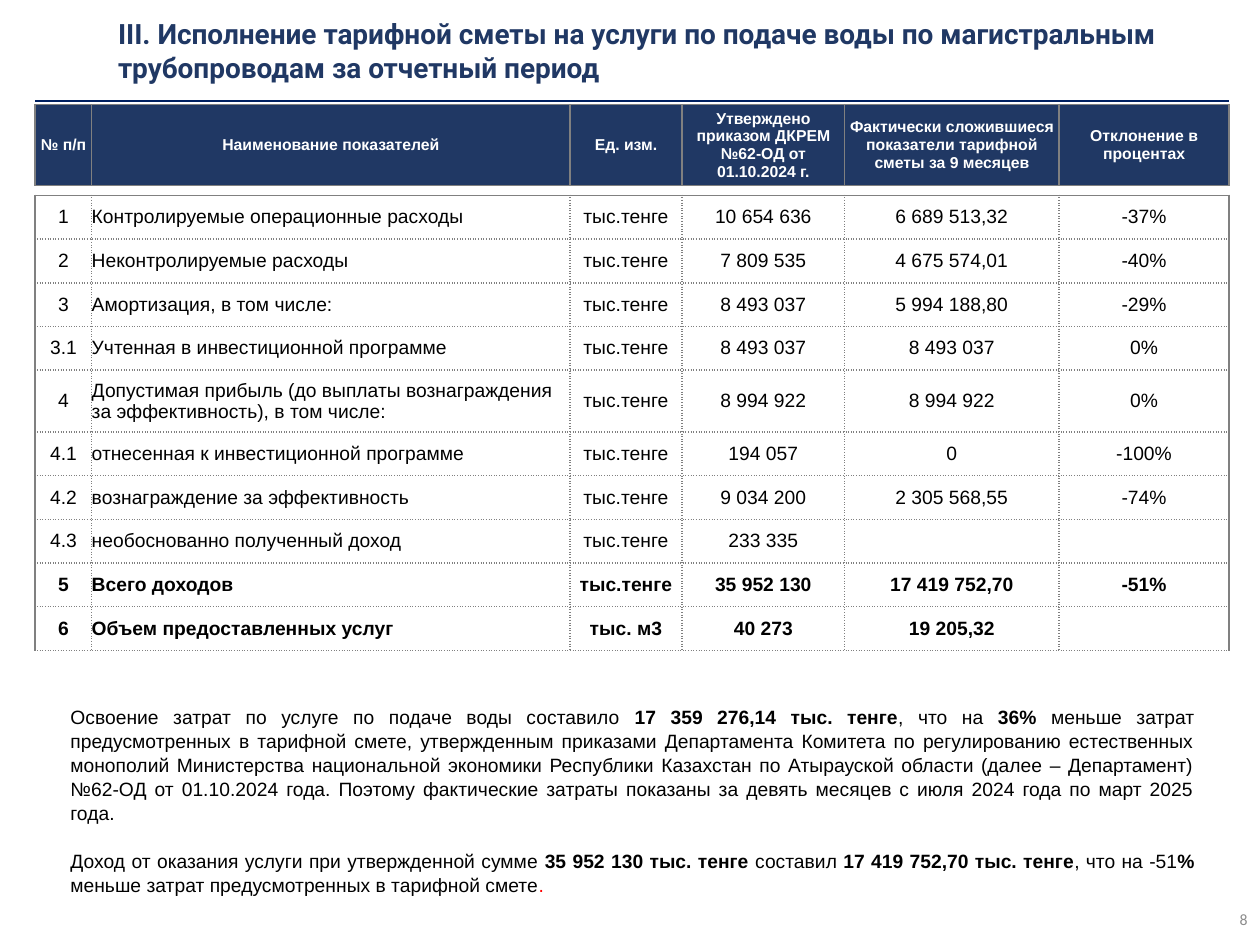
"""Build the slide on execution of the water supply tariff estimate."""
from lxml.etree import SubElement
from pptx import Presentation
from pptx.dml.color import RGBColor
from pptx.enum.shapes import MSO_CONNECTOR
from pptx.enum.text import MSO_ANCHOR, PP_ALIGN
from pptx.oxml.ns import qn
from pptx.util import Cm, Pt

COLORS = {"navy": "203864", "rule": "002060", "grid": "808080", "white": "FFFFFF",
          "text": "000000", "red": "FF0000", "number": "8C8C8C"}
TITLE = ("III. Исполнение тарифной сметы на услуги по подаче воды по магистральным "
         "трубопроводам за отчетный период")
HEADER = ["№ п/п", "Наименование показателей", "Ед. изм.",
          "Утверждено приказом ДКРЕМ №62-ОД от 01.10.2024 г.",
          "Фактически сложившиеся показатели тарифной сметы за 9 месяцев",
          "Отклонение в процентах"]
ROWS = [
    ("1", "Контролируемые операционные расходы", "тыс.тенге", "10 654 636", "6 689 513,32", "-37%"),
    ("2", "Неконтролируемые расходы", "тыс.тенге", "7 809 535", "4 675 574,01", "-40%"),
    ("3", "Амортизация, в том числе:", "тыс.тенге", "8 493 037", "5 994 188,80", "-29%"),
    ("3.1", "Учтенная в инвестиционной программе", "тыс.тенге", "8 493 037", "8 493 037", "0%"),
    ("4", "Допустимая прибыль (до выплаты вознаграждения за эффективность), в том числе:",
     "тыс.тенге", "8 994 922", "8 994 922", "0%"),
    ("4.1", "отнесенная к инвестиционной программе", "тыс.тенге", "194 057", "0", "-100%"),
    ("4.2", "вознаграждение за эффективность", "тыс.тенге", "9 034 200", "2 305 568,55", "-74%"),
    ("4.3", "необоснованно полученный доход", "тыс.тенге", "233 335", "", ""),
    ("5", "Всего доходов", "тыс.тенге", "35 952 130", "17 419 752,70", "-51%"),
    ("6", "Объем предоставленных услуг", "тыс. м3", "40 273", "19 205,32", ""),
]
TOTALS = ("5", "6")
COL_WIDTHS = [1.14, 9.64, 2.26, 3.28, 4.32, 3.43]
ROW_HEIGHTS = [1.25 if row[0] == "4" else 0.88 for row in ROWS]

BODY = {"name": "Arial", "size": Pt(11), "bold": False, "color": "text"}
BOLD = {**BODY, "bold": True}
RED = {**BODY, "color": "red"}
HEAD = {**BOLD, "size": Pt(9), "color": "white"}
HEADING = {"name": "Roboto", "size": Pt(16), "bold": True, "color": "navy"}
NUMBER = {"name": "Calibri", "size": Pt(9), "bold": False, "color": "number"}

NOTES = [
    [("Освоение затрат по услуге по подаче воды составило ", BODY),
     ("17 359 276,14 тыс. тенге", BOLD), (", что на ", BODY), ("36% ", BOLD),
     ("меньше затрат предусмотренных в тарифной смете, утвержденным приказами Департамента "
      "Комитета по регулированию естественных монополий Министерства национальной экономики "
      "Республики Казахстан по Атырауской области (далее – Департамент) №62-ОД от 01.10.2024 "
      "года. Поэтому фактические затраты показаны за девять месяцев с июля 2024 года по март "
      "2025 года.", BODY)],
    [("Доход от оказания услуги при утвержденной сумме ", BODY),
     ("35 952 130 тыс. тенге ", BOLD), ("составил ", BODY),
     ("17 419 752,70 тыс. тенге", BOLD), (", что на -51", BODY), ("% ", BOLD),
     ("меньше затрат предусмотренных в тарифной смете", BODY), (".", RED)],
]


def rgb(name):
    return RGBColor.from_string(COLORS[name])


def set_font(font, style):
    for key, value in style.items():
        if key == "color":
            font.color.rgb = rgb(value)
        else:
            setattr(font, key, value)


def add_runs(p, runs, align):
    p.alignment = align
    for text, style in runs:
        r = p.add_run()
        r.text = text
        set_font(r.font, style)


def add_text(s, box, paragraphs, align, anchor=MSO_ANCHOR.MIDDLE, **spacing):
    tf = s.shapes.add_textbox(*map(Cm, box)).text_frame
    tf.word_wrap = True
    tf.vertical_anchor = anchor
    for i, runs in enumerate(paragraphs):
        p = tf.paragraphs[0] if i == 0 else tf.add_paragraph()
        add_runs(p, runs, align)
        for key, value in spacing.items():
            if i or key != "space_before":
                setattr(p, key, value)


def set_border(cell, side, dash):
    ln = SubElement(cell._tc.get_or_add_tcPr(), qn(f"a:ln{side}"), w=str(Pt(1)))
    SubElement(SubElement(ln, qn("a:solidFill")), qn("a:srgbClr"), val=COLORS["grid"])
    SubElement(ln, qn("a:prstDash"), val=dash)


def add_grid(s, top, rows, heights, header=False):
    table = s.shapes.add_table(len(rows), len(COL_WIDTHS), Cm(0.71), Cm(top),
                               Cm(sum(COL_WIDTHS)), Cm(sum(heights))).table
    table.first_row = table.horz_banding = False
    for col, width in zip(table.columns, COL_WIDTHS):
        col.width = Cm(width)
    for i, (row, height) in enumerate(zip(rows, heights)):
        table.rows[i].height = Cm(height)
        style = HEAD if header else BOLD if row[0] in TOTALS else BODY
        for j, text in enumerate(row):
            cell = table.cell(i, j)
            solid = {"L": j == 0, "R": j == len(row) - 1, "T": i == 0, "B": False}
            for side, outer in solid.items():
                set_border(cell, side, "solid" if header or outer else "sysDot")
            cell.fill.solid()
            cell.fill.fore_color.rgb = rgb("navy" if header else "white")
            cell.vertical_anchor = MSO_ANCHOR.MIDDLE
            for side in ("left", "right", "top", "bottom"):
                setattr(cell, f"margin_{side}", 0)
            p = cell.text_frame.paragraphs[0]
            left = j == 1 and not header
            if text:
                add_runs(p, [(text, style)], PP_ALIGN.LEFT if left else PP_ALIGN.CENTER)
            else:
                set_font(p.font, style)


def main():
    prs = Presentation()
    prs.slide_width, prs.slide_height = Cm(25.4), Cm(19.05)
    s = prs.slides.add_slide(prs.slide_layouts[6])
    add_text(s, (1.17, 14.08, 23.16, 4.2), NOTES, PP_ALIGN.JUSTIFY, MSO_ANCHOR.TOP,
             line_spacing=1.04, space_before=Pt(13.5))
    add_grid(s, 2.11, [HEADER], [1.63], header=True)
    add_grid(s, 3.94, ROWS, ROW_HEIGHTS)
    add_text(s, (19.69, 18.03, 5.71, 1.02), [[("8", NUMBER)]], PP_ALIGN.RIGHT)
    add_text(s, (2.13, 0.36, 22.68, 1.3), [[(TITLE, HEADING)]], PP_ALIGN.LEFT)
    rule = s.shapes.add_connector(MSO_CONNECTOR.STRAIGHT, Cm(0.71), Cm(2.03), Cm(24.77), Cm(2.03))
    rule.line.color.rgb = rgb("rule")
    rule.line.width = Pt(1)
    SubElement(rule._element.spPr, qn("a:effectLst"))
    prs.save("out.pptx")


if __name__ == "__main__":
    main()
